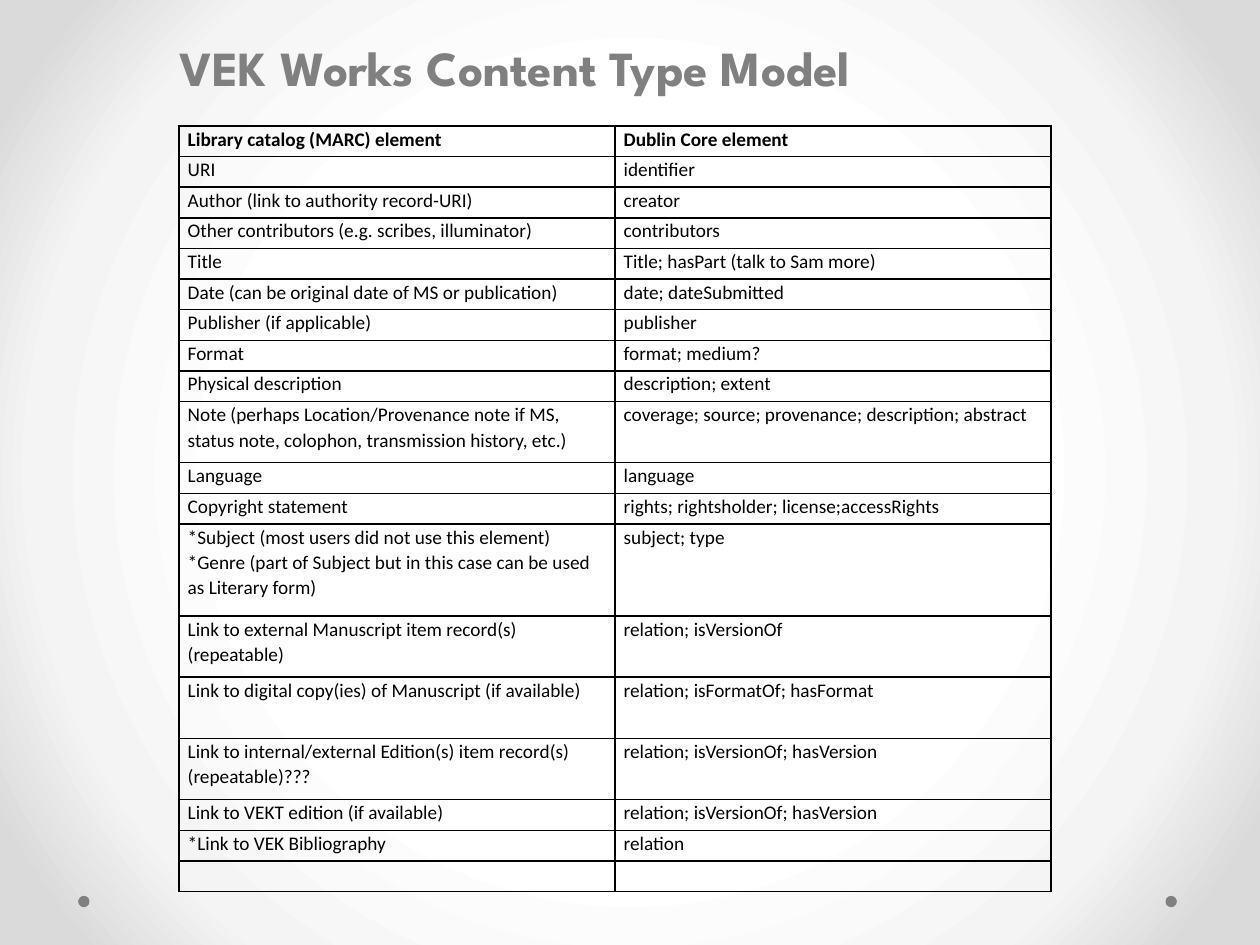
from lxml.etree import SubElement, fromstring
from pptx import Presentation
from pptx.dml.color import RGBColor as RGB
from pptx.enum.shapes import MSO_SHAPE as SHAPE
from pptx.oxml.ns import nsdecls, qn
from pptx.util import Inches, Pt

COLORS = {"grey": "808080", "ink": "000000",
          "centre": "FFFFFF", "ring": "F4F4F4", "edge": "DADADA"}
FIELDS = [  # (MARC element, Dublin Core element, height in table units)
    ("Library catalog (MARC) element", "Dublin Core element", 1),
    ("URI", "identifier", 1),
    ("Author (link to authority record-URI)", "creator", 1),
    ("Other contributors (e.g. scribes, illuminator)", "contributors", 1),
    ("Title", "Title; hasPart (talk to Sam more)", 1),
    ("Date (can be original date of MS or publication)", "date; dateSubmitted", 1),
    ("Publisher (if applicable)", "publisher", 1),
    ("Format", "format; medium?", 1),
    ("Physical description", "description; extent", 1),
    ("Note (perhaps Location/Provenance note if MS, status note, colophon, "
     "transmission history, etc.)",
     "coverage; source; provenance; description; abstract", 2),
    ("Language", "language", 1),
    ("Copyright statement", "rights; rightsholder; license;accessRights", 1),
    ("*Subject (most users did not use this element)\n"
     "*Genre (part of Subject but in this case can be used as Literary form)",
     "subject; type", 3),
    ("Link to external Manuscript item record(s) (repeatable)",
     "relation; isVersionOf", 2),
    ("Link to digital copy(ies) of Manuscript (if available)",
     "relation; isFormatOf; hasFormat", 2),
    ("Link to internal/external Edition(s) item record(s) (repeatable)???",
     "relation; isVersionOf; hasVersion", 2),
    ("Link to VEKT edition (if available)", "relation; isVersionOf; hasVersion", 1),
    ("*Link to VEK Bibliography", "relation", 1),
    ("", "", 1),
]


class Deck:
    """Lengths are in grid units: 100 columns by 75 rows over the slide."""
    COLS, ROWS = 100, 75

    def __init__(self, width, height):
        self.prs = Presentation()
        self.prs.slide_width, self.prs.slide_height = Inches(width), Inches(height)
        self.slide = self.prs.slides.add_slide(self.prs.slide_layouts[6])

    def x(self, cols):
        return round(self.prs.slide_width * cols / self.COLS)

    def y(self, rows):
        return round(self.prs.slide_height * rows / self.ROWS)

    def box(self, left, top, width, height):
        return self.x(left), self.y(top), self.x(width), self.y(height)

    def style(self, p, font, size, color, bold=False):
        p.font.name, p.font.size, p.font.bold = font, Pt(size), bold
        p.font.color.rgb = RGB.from_string(COLORS[color])

    def background(self, stops):
        """Fill the slide with a circular gradient from its centre."""
        marks = "".join(f'<a:gs pos="{pos * 1000}"><a:srgbClr val="{COLORS[name]}"/></a:gs>'
                        for pos, name in stops)
        bg = fromstring(
            f'<p:bg {nsdecls("p", "a")}><p:bgPr><a:gradFill rotWithShape="1">'
            f'<a:gsLst>{marks}</a:gsLst><a:path path="circle">'
            '<a:fillToRect l="50000" t="50000" r="50000" b="50000"/></a:path>'
            '</a:gradFill><a:effectLst/></p:bgPr></p:bg>')
        self.slide.element.cSld.insert(0, bg)

    def dot(self, left, top, size):
        sp = self.slide.shapes.add_shape(SHAPE.OVAL, *self.box(left, top, size, size))
        sp.shadow.inherit = False
        sp.fill.solid()
        sp.fill.fore_color.rgb = RGB.from_string(COLORS["grey"])
        sp.line.fill.background()

    def title(self, text, *place):
        tf = self.slide.shapes.add_textbox(*self.box(*place)).text_frame
        tf.word_wrap = True
        p = tf.paragraphs[0]
        p.text = text
        self.style(p, "League Spartan", 28, "grey", bold=True)

    def borders(self, cell):
        tc_pr = cell._tc.get_or_add_tcPr()
        for side in ("lnL", "lnR", "lnT", "lnB"):
            ln = SubElement(tc_pr, qn(f"a:{side}"), w=str(Pt(1)))
            fill = SubElement(ln, qn("a:solidFill"))
            SubElement(fill, qn("a:srgbClr"), val=COLORS["ink"])

    def cell(self, cell, text, bold):
        self.borders(cell)
        cell.fill.background()
        cell.margin_left = cell.margin_right = Inches(0.07)
        cell.margin_top = cell.margin_bottom = 0
        cell.text = text
        for p in cell.text_frame.paragraphs:
            p.line_spacing = 1.07
            self.style(p, "Calibri", 11, "ink", bold)
            if not text:  # keeps the empty row from growing
                p._p.get_or_add_endParaRPr().set("sz", "1100")

    def table(self, rows, left, top, width, height):
        place = self.box(left, top, width, height)
        table = self.slide.shapes.add_table(len(rows), 2, *place).table
        table.first_row = table.horz_banding = False
        unit = height / sum(units for *_, units in rows)
        for i, (*texts, units) in enumerate(rows):
            table.rows[i].height = self.y(units * unit)
            for j, text in enumerate(texts):
                self.cell(table.cell(i, j), text, bold=i == 0)


def main():
    deck = Deck(10, 7.5)
    deck.background([(50, "centre"), (76, "ring"), (92, "edge")])
    for left in (92.5, 6.2):
        deck.dot(left, 71.1, 0.9)
    deck.title("VEK Works Content Type Model", 13.3, 2.5, 75, 5.7)
    deck.table(FIELDS, 14.2, 10, 69.2, 60.8)
    deck.prs.save("out.pptx")


if __name__ == "__main__":
    main()
